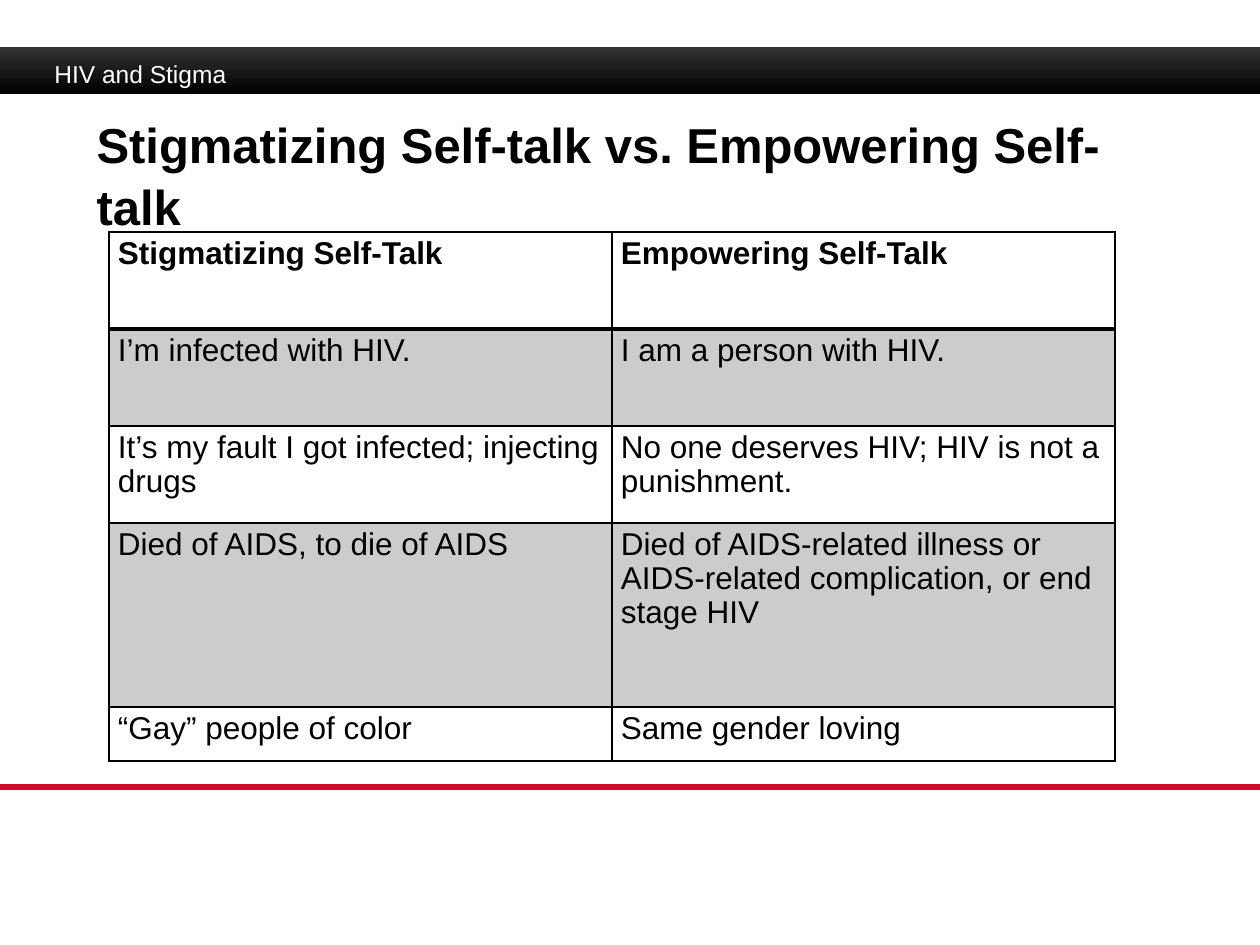
import dataclasses

import pptx
import pptx.dml.color
import pptx.enum.shapes
import pptx.enum.text
import pptx.oxml
import pptx.oxml.ns
import pptx.util
from lxml import etree

SCALE = 914400 / 126
NS = pptx.oxml.ns.nsdecls("a")


@dataclasses.dataclass(frozen=True)
class Theme:
    font: str = "Arial"
    dark: str = "000000"
    light: str = "FFFFFF"
    band: str = "333333"
    rule: str = "CF0A2C"
    title: int = 28
    label: int = 14
    cell: int = 18


THEME = Theme()
ROWS = [
    ("Stigmatizing Self-Talk", "Empowering Self-Talk"),
    ("I’m infected with HIV.", "I am a person with HIV."),
    ("It’s my fault I got infected; injecting drugs",
     "No one deserves HIV; HIV is not a punishment."),
    ("Died of AIDS, to die of AIDS",
     "Died of AIDS-related illness or AIDS-related complication, or end stage HIV"),
    ("“Gay” people of color", "Same gender loving"),
]
HEIGHTS = [97, 97, 97, 184, 54]


def px(*vals):
    return [pptx.util.Emu(round(val * SCALE)) for val in vals]


def rgb(code):
    return pptx.dml.color.RGBColor.from_string(code)


def write(frame, text, size, color, bold=False, pitch=1.0):
    frame.word_wrap = True
    frame.text = text
    para = frame.paragraphs[0]
    para.alignment = pptx.enum.text.PP_ALIGN.LEFT
    para.line_spacing = pitch
    font = para.runs[0].font
    font.name, font.size, font.bold = THEME.font, pptx.util.Pt(size), bold
    font.color.rgb = rgb(color)


def add_band(slide):
    kind = pptx.enum.shapes.MSO_SHAPE.RECTANGLE
    band = slide.shapes.add_shape(kind, *px(0, 47, 1260, 47))
    band.shadow.inherit = False
    band.line.fill.background()
    band.fill.gradient()
    band.fill.gradient_angle = 270
    for stop, color in zip(band.fill.gradient_stops, (THEME.band, THEME.dark)):
        stop.color.rgb = rgb(color)


def add_rule(slide):
    kind = pptx.enum.shapes.MSO_CONNECTOR.STRAIGHT
    rule = slide.shapes.add_connector(kind, *px(0, 787, 1260, 787))
    rule.line.color.rgb = rgb(THEME.rule)
    rule.line.width = pptx.util.Pt(3)
    etree.SubElement(rule._element.spPr, pptx.oxml.ns.qn("a:effectLst"))


def add_title(slide, text):
    title = slide.shapes.title
    title.left, title.top, title.width, title.height = px(84, 105, 1092, 95)
    frame = title.text_frame
    frame.auto_size = pptx.enum.text.MSO_AUTO_SIZE.NONE
    frame.vertical_anchor = pptx.enum.text.MSO_ANCHOR.TOP
    write(frame, text, THEME.title, THEME.dark, bold=True, pitch=1.05)


def add_label(slide, text):
    box = slide.shapes.add_textbox(*px(42, 53, 198, 43))
    write(box.text_frame, text, THEME.label, THEME.light)


def set_edges(cell, widths):
    """Draw cell borders; widths maps a side (L, R, T, B) to points."""
    props = cell._tc.get_or_add_tcPr()
    for spot, (side, width) in enumerate(widths.items()):
        props.insert(spot, pptx.oxml.parse_xml(
            f'<a:ln{side} {NS} w="{pptx.util.Pt(width)}"><a:solidFill>'
            f'<a:srgbClr val="{THEME.dark}"/></a:solidFill></a:ln{side}>'))


def tint(cell):
    """Fill a cell with the dark colour at 20 % opacity."""
    cell.fill.solid()
    cell.fill.fore_color.rgb = rgb(THEME.dark)
    color = cell._tc.tcPr.find(".//" + pptx.oxml.ns.qn("a:srgbClr"))
    etree.SubElement(color, pptx.oxml.ns.qn("a:alpha"), val="20000")


def add_grid(slide):
    frame = slide.shapes.add_table(
        len(ROWS), 2, *px(109, 232, 1006, sum(HEIGHTS)))
    table = frame.table
    table.first_row = table.horz_banding = False
    for row, (texts, high) in enumerate(zip(ROWS, HEIGHTS)):
        table.rows[row].height = px(high)[0]
        for col, text in enumerate(texts):
            cell = table.cell(row, col)
            cell.margin_left, cell.margin_right = px(9, 9)
            cell.margin_top, cell.margin_bottom = px(5, 5)
            write(cell.text_frame, text, THEME.cell, THEME.dark,
                  bold=row == 0, pitch=0.97)
            if row % 2:
                tint(cell)
            else:
                cell.fill.background()
            set_edges(cell, {"L": 1, "R": 1, "T": 2 if row == 1 else 1,
                             "B": 2 if row == 0 else 1})


def main():
    deck = pptx.Presentation()
    deck.slide_width, deck.slide_height = px(1260, 945)
    slide = deck.slides.add_slide(deck.slide_layouts[5])
    add_band(slide)
    add_rule(slide)
    add_title(slide, "Stigmatizing Self-talk vs. Empowering Self-talk")
    add_grid(slide)
    add_label(slide, "HIV and Stigma")
    deck.save("out.pptx")


if __name__ == "__main__":
    main()
